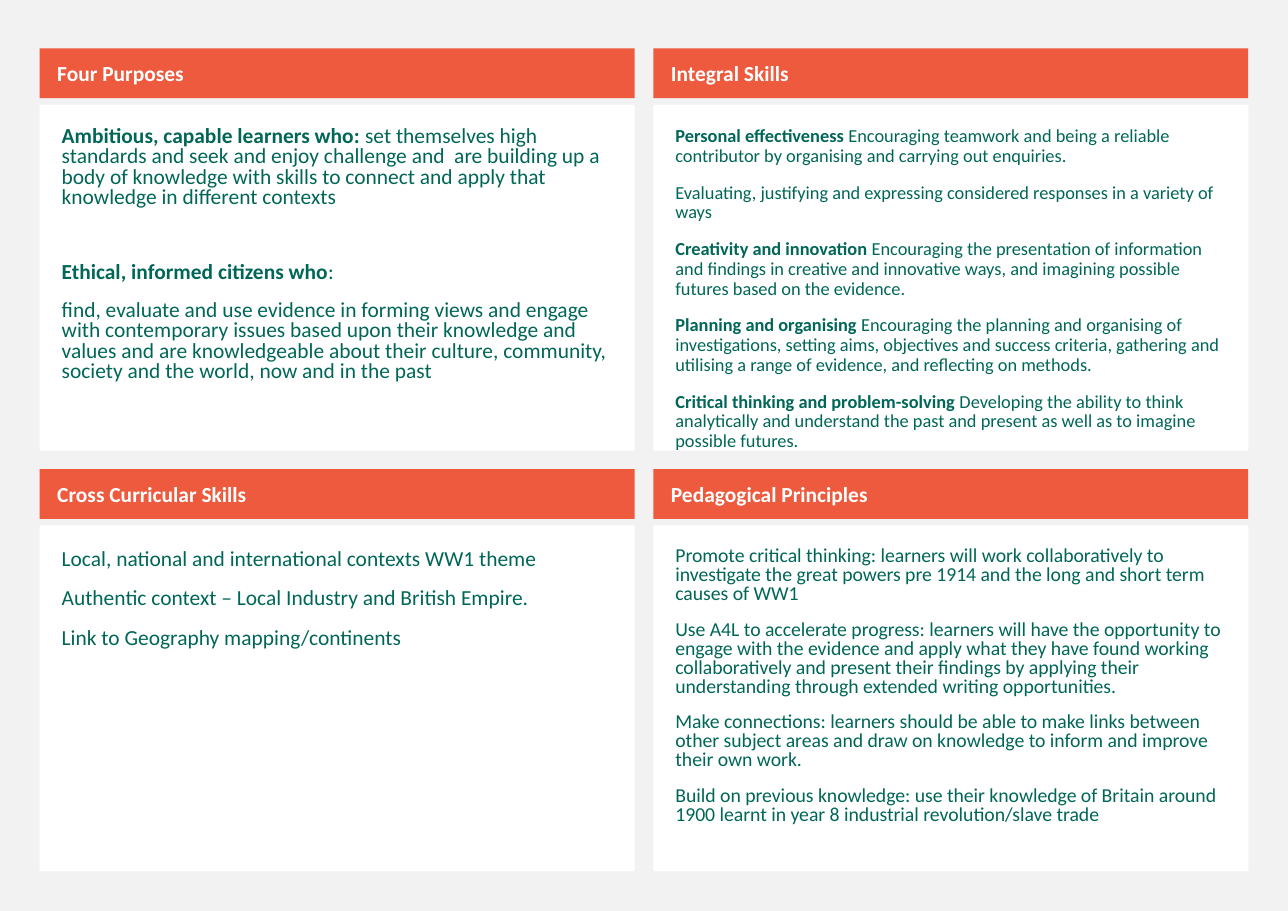
from lxml.etree import SubElement
from pptx import Presentation
from pptx.dml.color import RGBColor
from pptx.enum.shapes import MSO_SHAPE as Preset
from pptx.enum.text import MSO_ANCHOR as Anchor, MSO_AUTO_SIZE as AutoSize, PP_ALIGN as Align
from pptx.oxml.ns import qn
from pptx.util import Inches, Pt

GREEN, ORANGE, WHITE, GREY = "006758", "ED5A3E", "FFFFFF", "F2F2F2"
HEADING_HEIGHT, DETAILS_OFFSET, DETAILS_HEIGHT = 0.45, 0.51, 3.14
PANEL_LEFT, PANEL_TOP, PANEL_WIDTH = 0.36, 0.44, 5.4
COLUMN_STEP, ROW_STEP = 5.57, 3.82

PANELS = [
    {"heading": "Four Purposes", "size": 14, "spacing": 0.8, "gaps": {1: 35.5}, "details": [
        ("Ambitious, capable learners who: ",
         "set themselves high standards and seek and enjoy challenge and  are building up a body of "
         "knowledge with skills to connect and apply that knowledge in different contexts"),
        ("Ethical, informed citizens who", ":"),
        ("", "find, evaluate and use evidence in forming views and engage with contemporary issues based "
         "upon their knowledge and values and are knowledgeable about their culture, community, society "
         "and the world, now and in the past"),
    ]},
    {"heading": "Integral Skills", "size": 12, "spacing": 0.9, "gaps": {}, "details": [
        ("Personal effectiveness", " Encouraging teamwork and being a reliable contributor by "
         "organising and carrying out enquiries."),
        ("", "Evaluating, justifying and expressing considered responses in a variety of ways"),
        ("Creativity and innovation", " Encouraging the presentation of information and findings in "
         "creative and innovative ways, and imagining possible futures based on the evidence."),
        ("Planning and organising", " Encouraging the planning and organising of investigations, "
         "setting aims, objectives and success criteria, gathering and utilising a range of evidence, "
         "and reflecting on methods."),
        ("Critical thinking and problem-solving", " Developing the ability to think analytically and "
         "understand the past and present as well as to imagine possible futures."),
    ]},
    {"heading": "Cross Curricular Skills", "size": 14, "spacing": 0.9, "gaps": {}, "details": [
        ("", "Local, national and international contexts WW1 theme"),
        ("", "Authentic context – Local Industry and British Empire."),
        ("", "Link to Geography mapping/continents"),
    ]},
    {"heading": "Pedagogical Principles", "size": 12.9, "spacing": 0.8, "gaps": {}, "details": [
        ("", "Promote critical thinking: learners will work collaboratively to investigate the great "
         "powers pre 1914 and the long and short term causes of WW1"),
        ("", "Use A4L to accelerate progress: learners will have the opportunity to engage with the "
         "evidence and apply what they have found working collaboratively and present their findings "
         "by applying their understanding through extended writing opportunities."),
        ("", "Make connections: learners should be able to make links between other subject areas and "
         "draw on knowledge to inform and improve their own work."),
        ("", "Build on previous knowledge: use their knowledge of Britain around 1900 learnt in year 8 "
         "industrial revolution/slave trade"),
    ]},
]


def paint(fill, colour):
    """Make a fill solid in the given hex colour."""
    fill.solid()
    fill.fore_color.rgb = RGBColor.from_string(colour)


def apply_format(target, values):
    """Set each attribute named in a dict of format values."""
    for attribute, value in values.items():
        setattr(target, attribute, value)


def prepare_frame(frame, anchor, insets):
    """Set wrapping, anchor and left, top, right and bottom insets."""
    left, top, right, bottom = map(Inches, insets)
    apply_format(frame, {
        "word_wrap": True, "auto_size": AutoSize.NONE, "vertical_anchor": anchor,
        "margin_left": left, "margin_top": top, "margin_right": right, "margin_bottom": bottom,
    })


def add_run(paragraph, text, size, colour, bold):
    """Append one formatted run."""
    run = paragraph.add_run()
    run.text = text
    apply_format(run.font, {"name": "Calibri", "size": Pt(size), "bold": bold})
    paint(run.font.fill, colour)


def add_heading(slide, text, left, top, width):
    """Draw the orange heading bar of a panel."""
    bar = slide.shapes.add_shape(Preset.RECTANGLE, Inches(left), Inches(top),
                                 Inches(width), Inches(HEADING_HEIGHT))
    bar.shadow.inherit = False
    bar.line.fill.background()
    paint(bar.fill, ORANGE)
    prepare_frame(bar.text_frame, Anchor.MIDDLE, (0.16, 0.05, 0.1, 0.05))
    paragraph = bar.text_frame.paragraphs[0]
    paragraph.alignment = Align.LEFT
    add_run(paragraph, text, 14, WHITE, True)


def fill_details(body, panel, left, top, width):
    """Place a body placeholder and write the panel's paragraphs in it."""
    apply_format(body, {"left": Inches(left), "top": Inches(top),
                        "width": Inches(width), "height": Inches(DETAILS_HEIGHT)})
    paint(body.fill, WHITE)
    frame = body.text_frame
    prepare_frame(frame, Anchor.TOP, (0.2,) * 4)
    for index, (lead, text) in enumerate(panel["details"]):
        paragraph = frame.add_paragraph() if index else frame.paragraphs[0]
        apply_format(paragraph, {
            "alignment": Align.LEFT, "line_spacing": panel["spacing"],
            "space_before": Pt(panel["gaps"].get(index, 11)), "space_after": Pt(0),
        })
        properties = paragraph._p.get_or_add_pPr()
        properties.set("marL", "0")
        properties.set("indent", "0")
        SubElement(properties, qn("a:buNone"))
        if lead:
            add_run(paragraph, lead, panel["size"], GREEN, True)
        add_run(paragraph, text, panel["size"], GREEN, False)


def add_panel(slide, body, panel, left, top, width):
    """Build one heading bar with its details below."""
    add_heading(slide, panel["heading"], left, top, width)
    fill_details(body, panel, left, top + DETAILS_OFFSET, width)


def main():
    """Build the slide of four panels and save it."""
    presentation = Presentation()
    apply_format(presentation, {"slide_width": Inches(11.69), "slide_height": Inches(8.27)})
    comparison = presentation.slide_layouts.get_by_name("Comparison")
    slide = presentation.slides.add_slide(comparison)
    paint(slide.background.fill, GREY)
    title, *bodies = slide.placeholders
    title.element.getparent().remove(title.element)
    for index, (body, panel) in enumerate(zip(bodies, PANELS)):
        row, column = divmod(index, 2)
        add_panel(slide, body, panel, PANEL_LEFT + column * COLUMN_STEP,
                  PANEL_TOP + row * ROW_STEP, PANEL_WIDTH)
    presentation.save("out.pptx")


if __name__ == "__main__":
    main()
